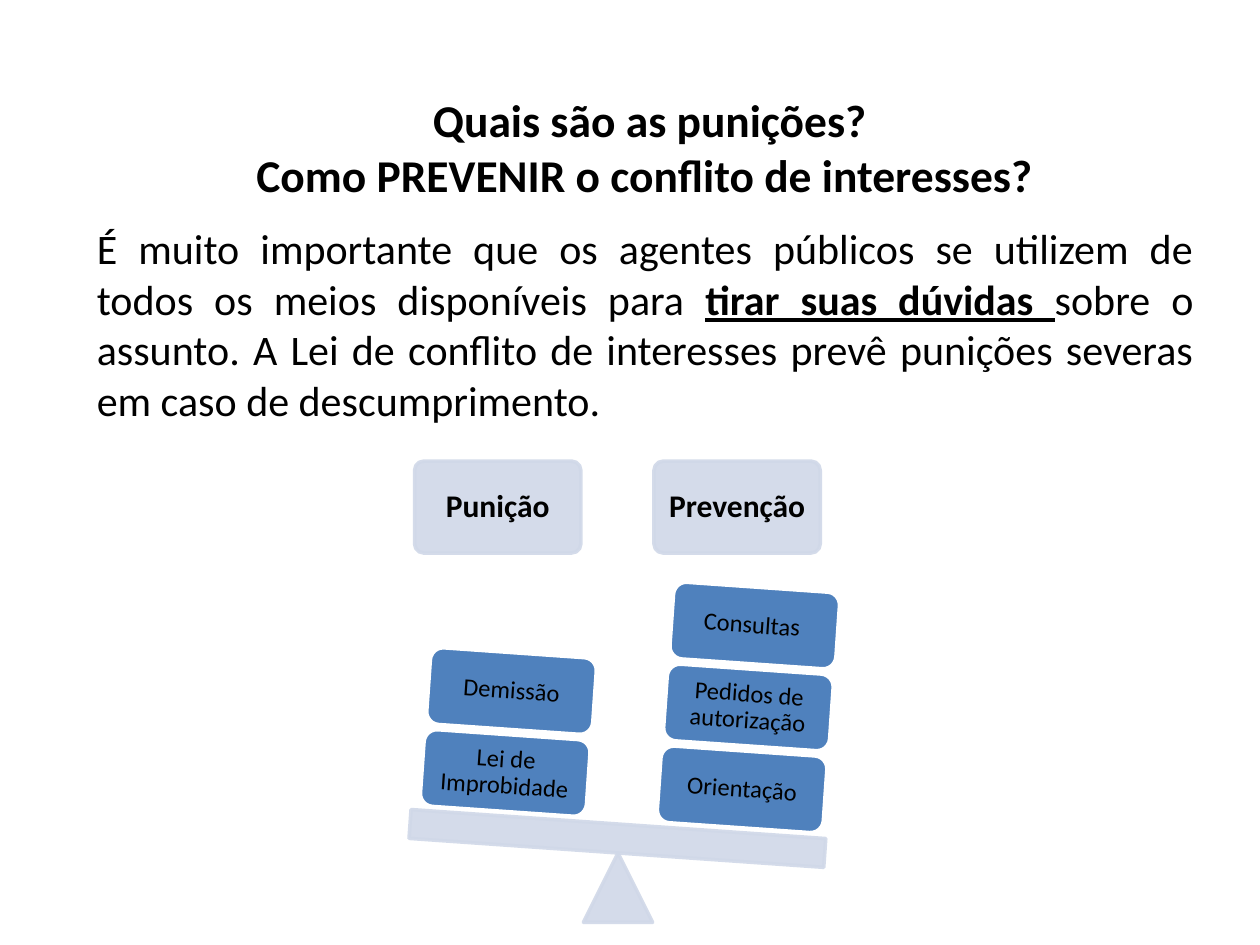
from dataclasses import dataclass

import pptx
import pptx.dml.color
import pptx.enum.shapes
import pptx.enum.text
import pptx.oxml
import pptx.oxml.ns
import pptx.util
from pptx.util import Inches

SHAPE = pptx.enum.shapes.MSO_SHAPE
ALIGN = pptx.enum.text.PP_ALIGN
ANCHOR = pptx.enum.text.MSO_ANCHOR
AUTO_SIZE = pptx.enum.text.MSO_AUTO_SIZE


@dataclass(frozen=True)
class Theme:
    font: str = "Calibri"
    ink: str = "000000"
    pale: str = "D0D8E8"
    blue: str = "4F81BD"
    white: str = "FFFFFF"
    title_size: int = 26
    body_size: int = 24
    heading_size: int = 18
    weight_size: int = 14
    outline: int = 2


THEME = Theme()
TILT = 4  # degrees the balance leans to the right


def rgb(value):
    return pptx.dml.color.RGBColor.from_string(value)


def set_font(paragraph, size, bold=False):
    font = paragraph.font
    font.name = THEME.font
    font.size = pptx.util.Pt(size)
    font.bold = bold
    font.color.rgb = rgb(THEME.ink)


def make_translucent(shape, percent):
    """Give the fill and the outline of a shape the same opacity."""
    for color in shape._element.spPr.iter(pptx.oxml.ns.qn("a:srgbClr")):
        alpha = pptx.oxml.parse_xml(
            f'<a:alpha {pptx.oxml.ns.nsdecls("a")} val="{percent * 1000}"/>')
        color.append(alpha)


def add_block(slide, preset, left, top, width, height, fill, outline, rotation=0):
    block = slide.shapes.add_shape(
        preset, Inches(left), Inches(top), Inches(width), Inches(height))
    block.rotation = rotation
    block.shadow.inherit = False
    block.fill.solid()
    block.fill.fore_color.rgb = rgb(fill)
    block.line.color.rgb = rgb(outline)
    block.line.width = pptx.util.Pt(THEME.outline)
    return block


def add_pale_block(slide, preset, left, top, width, height, rotation=0):
    block = add_block(slide, preset, left, top, width, height,
                      THEME.pale, THEME.pale, rotation)
    make_translucent(block, 90)
    return block


def add_label(block, text, size, bold=False):
    frame = block.text_frame
    frame.word_wrap = True
    frame.vertical_anchor = ANCHOR.MIDDLE
    frame.margin_left = frame.margin_right = Inches(0.09)
    frame.margin_top = frame.margin_bottom = Inches(0.09)
    paragraph = frame.paragraphs[0]
    paragraph.text = text
    paragraph.alignment = ALIGN.CENTER
    paragraph.line_spacing = 0.9
    set_font(paragraph, size, bold)


def add_heading(slide, left, text):
    heading = add_pale_block(slide, SHAPE.ROUNDED_RECTANGLE, left, 3.66, 1.32, 0.73)
    heading.adjustments[0] = 0.1
    add_label(heading, text, THEME.heading_size, bold=True)


def add_weights(slide, left, top, labels):
    """Stack weights upwards from the beam, leaning with its tilt."""
    for level, text in enumerate(labels):
        weight = add_block(
            slide, SHAPE.ROUNDED_RECTANGLE, left + 0.05 * level, top - 0.65 * level,
            1.32, 0.61, THEME.blue, THEME.white, TILT)
        add_label(weight, text, THEME.weight_size)


def set_title(slide, text):
    title = slide.shapes.title
    title.left, title.top = Inches(0.66), Inches(0.68)
    title.width, title.height = Inches(9), Inches(1.25)
    frame = title.text_frame
    frame.auto_size = AUTO_SIZE.NONE
    frame.vertical_anchor = ANCHOR.TOP
    paragraph = frame.paragraphs[0]
    paragraph.text = text
    paragraph.alignment = ALIGN.CENTER
    set_font(paragraph, THEME.title_size, bold=True)


def add_advice(slide, before, emphasis, after):
    advice = slide.shapes.add_textbox(
        Inches(0.67), Inches(1.72), Inches(8.9), Inches(1.72))
    frame = advice.text_frame
    frame.word_wrap = True
    paragraph = frame.paragraphs[0]
    paragraph.alignment = ALIGN.JUSTIFY
    set_font(paragraph, THEME.body_size)
    for text, stressed in ((before, False), (emphasis, True), (after, False)):
        run = paragraph.add_run()
        run.text = text
        if stressed:
            run.font.bold = True
            run.font.underline = True


def main():
    deck = pptx.Presentation()
    deck.slide_width, deck.slide_height = Inches(10), Inches(7.5)
    slide = deck.slides.add_slide(deck.slide_layouts.get_by_name("Title Only"))

    # Question and advice
    set_title(slide, "Quais são as punições?\vComo PREVENIR o conflito de interesses? ")
    add_advice(
        slide,
        "É muito importante que os agentes públicos se utilizem de todos os "
        "meios disponíveis para ",
        "tirar suas dúvidas ",
        "sobre o assunto. A Lei de conflito de interesses prevê punições "
        "severas em caso de descumprimento.")

    # Headings of the two sides
    add_heading(slide, 3.29, "Punição")
    add_heading(slide, 5.19, "Prevenção")

    # Balance: pivot and tilted beam
    add_pale_block(slide, SHAPE.ISOSCELES_TRIANGLE, 4.63, 6.77, 0.55, 0.55)
    add_pale_block(slide, SHAPE.RECTANGLE, 3.25, 6.54, 3.3, 0.23, TILT)

    # Weights, listed from the beam upwards
    add_weights(slide, 5.23, 5.96, ["Orientação", "Pedidos de autorização", "Consultas "])
    add_weights(slide, 3.35, 5.83, ["Lei de Improbidade", "Demissão"])

    deck.save("out.pptx")


if __name__ == "__main__":
    main()
